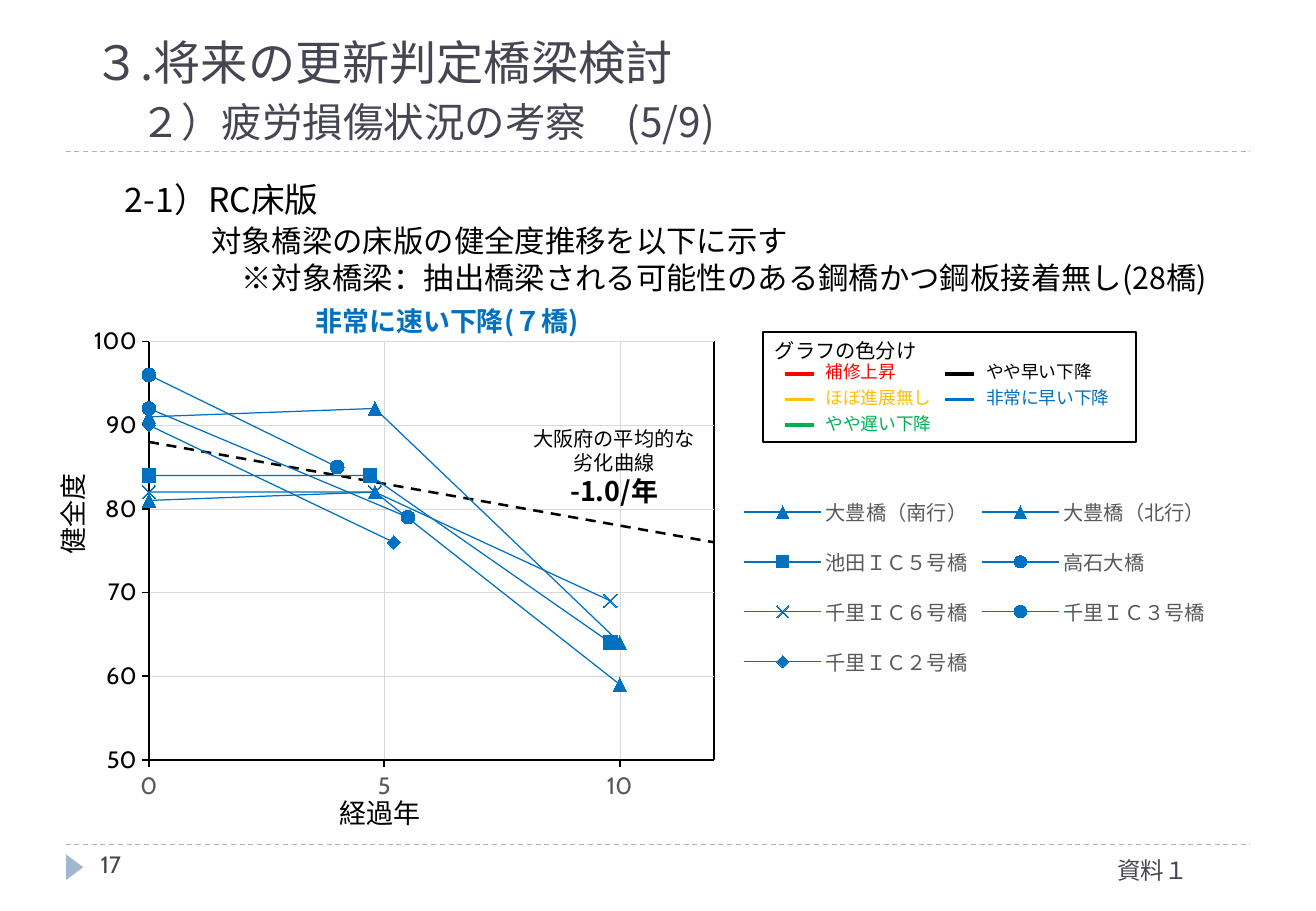
from lxml import etree
from pptx import Presentation
from pptx.chart.data import XyChartData
from pptx.dml.color import RGBColor
from pptx.enum.chart import XL_CHART_TYPE, XL_LEGEND_POSITION, XL_MARKER_STYLE, XL_TICK_MARK
from pptx.enum.dml import MSO_LINE
from pptx.enum.shapes import MSO_CONNECTOR, MSO_SHAPE
from pptx.enum.text import MSO_ANCHOR, MSO_AUTO_SIZE, PP_ALIGN
from pptx.oxml import parse_xml
from pptx.oxml.ns import nsdecls, qn
from pptx.util import Pt

LEFT, CENTER, RIGHT = PP_ALIGN.LEFT, PP_ALIGN.CENTER, PP_ALIGN.RIGHT
TRIANGLE, SQUARE = XL_MARKER_STYLE.TRIANGLE, XL_MARKER_STYLE.SQUARE
CIRCLE, CROSS = XL_MARKER_STYLE.CIRCLE, XL_MARKER_STYLE.X
DIAMOND, NO_MARKER = XL_MARKER_STYLE.DIAMOND, XL_MARKER_STYLE.NONE
DASH = MSO_LINE.DASH
JAPANESE, LATIN = "Noto Sans CJK JP", "Cabin"
COLORS = {
    "black": "000000", "white": "FFFFFF", "title": "464653", "rule": "9FB8CD",
    "blue": "0070C0", "red": "FF0000", "amber": "FFC000", "green": "00B050",
    "grid": "D9D9D9", "label": "595959",
}
BRIDGES = [
    ("大豊橋（南行）", TRIANGLE, [(0, 81), (4.8, 82), (10, 59)]),
    ("大豊橋（北行）", TRIANGLE, [(0, 91), (4.8, 92), (10, 64)]),
    ("池田ＩＣ５号橋", SQUARE, [(0, 84), (4.7, 84), (9.8, 64)]),
    ("高石大橋", CIRCLE, [(0, 96), (4, 85)]),
    ("千里ＩＣ６号橋", CROSS, [(0, 82), (4.8, 82), (9.8, 69)]),
    ("千里ＩＣ３号橋", CIRCLE, [(0, 92), (5.5, 79)]),
    ("千里ＩＣ２号橋", DIAMOND, [(0, 90), (5.2, 76)]),
]
AVERAGE = ("Series 8", NO_MARKER, [(0, 88), (20, 68)])
COLOR_KEY = [
    (0, 0, "補修上昇", "red"), (0, 1, "ほぼ進展無し", "amber"), (0, 2, "やや遅い下降", "green"),
    (1, 0, "やや早い下降", "black"), (1, 1, "非常に早い下降", "blue"),
]


def rgb(name):
    """Return the named colour."""
    return RGBColor.from_string(COLORS[name])


def style_font(font, size, color, name=LATIN, bold=False):
    """Set size, colour, family and weight of a font."""
    font.size = Pt(size)
    font.bold = bold
    font.color.rgb = rgb(color)
    font.name = name


def style_line(line, color, width, dash=None):
    """Set colour, width and dash of a line."""
    line.color.rgb = rgb(color)
    line.width = Pt(width)
    if dash:
        line.dash_style = dash


def style_paragraph(paragraph, size, color, name=JAPANESE, bold=False, align=LEFT):
    """Format a whole paragraph, East Asian letters included."""
    paragraph.alignment = align
    style_font(paragraph.font, size, color, name, bold)
    for properties in paragraph._p.iter(qn("a:defRPr")):
        etree.SubElement(properties, qn("a:ea"), typeface=JAPANESE)


def add_text(shapes, box, lines, size, color="black", name=JAPANESE, bold=False, align=LEFT):
    """Add a wrapping text box with one paragraph per line."""
    shape = shapes.add_textbox(*map(Pt, box))
    frame = shape.text_frame
    frame.word_wrap = True
    for index, line in enumerate(lines):
        paragraph = frame.add_paragraph() if index else frame.paragraphs[0]
        paragraph.text = line
        style_paragraph(paragraph, size, color, name, bold, align)
    return shape


def add_shape(shapes, kind, box, fill):
    """Add a flat preset shape without an outline."""
    shape = shapes.add_shape(kind, *map(Pt, box))
    shape.shadow.inherit = False
    shape.fill.solid()
    shape.fill.fore_color.rgb = rgb(fill)
    shape.line.fill.background()
    return shape


def add_rule(shapes, left, right, y, color, width, dash=None):
    """Add a horizontal line."""
    line = shapes.add_connector(MSO_CONNECTOR.STRAIGHT, Pt(left), Pt(y), Pt(right), Pt(y))
    style_line(line.line, color, width, dash)
    etree.SubElement(line._element.spPr, qn("a:effectLst"))


def add_title(slide):
    """Fill and place the two-line title."""
    title = slide.shapes.title
    title.left, title.top, title.width, title.height = Pt(48.2), Pt(18.7), Pt(686), Pt(72)
    frame = title.text_frame
    frame.auto_size = MSO_AUTO_SIZE.NONE
    frame.vertical_anchor = MSO_ANCHOR.BOTTOM
    paragraph = frame.paragraphs[0]
    style_paragraph(paragraph, 28, "title")
    heading = paragraph.add_run()
    heading.text = "３.将来の更新判定橋梁検討"
    heading.font.size = Pt(28)
    paragraph.add_line_break()
    for text, size in (("\u3000", 28), ("２）疲労損傷状況の考察　(5/9)", 24)):
        run = paragraph.add_run()
        run.text = text
        run.font.size = Pt(size)


def manual_layout(x, y, width, height, inner=False):
    """Build a chart layout element from fractions of the chart."""
    target = '<c:layoutTarget val="inner"/>' if inner else ""
    return parse_xml(
        f'<c:layout {nsdecls("c")}><c:manualLayout>{target}'
        '<c:xMode val="edge"/><c:yMode val="edge"/>'
        f'<c:x val="{x}"/><c:y val="{y}"/><c:w val="{width}"/><c:h val="{height}"/>'
        "</c:manualLayout></c:layout>")


def style_axis(axis, low, high, step, color):
    """Set scale, grid and labels of an axis."""
    axis.minimum_scale, axis.maximum_scale, axis.major_unit = low, high, step
    axis.has_major_gridlines = True
    style_line(axis.major_gridlines.format.line, "grid", 0.25)
    style_line(axis.format.line, "black", 1)
    axis.major_tick_mark = XL_TICK_MARK.OUTSIDE
    axis.minor_tick_mark = XL_TICK_MARK.NONE
    axis.tick_labels.number_format = "General"
    axis.tick_labels.number_format_is_linked = False
    style_font(axis.tick_labels.font, 14, color)


def style_series(series, marker, color, width, dash=None):
    """Set line and marker of a series."""
    series.smooth = False
    style_line(series.format.line, color, width, dash)
    series.marker.style = marker
    if marker != NO_MARKER:
        series.marker.size = 8
        series.marker.format.fill.solid()
        series.marker.format.fill.fore_color.rgb = rgb(color)
        style_line(series.marker.format.line, color, 0.75)


def add_legend(chart):
    """Add the bridge legend without the average curve."""
    chart.has_legend = True
    legend = chart.legend
    legend.position = XL_LEGEND_POSITION.BOTTOM
    legend.include_in_layout = False
    style_font(legend.font, 12, "label")
    element = legend._element
    for layout in element.findall(qn("c:layout")):
        element.remove(layout)
    entry = parse_xml(f'<c:legendEntry {nsdecls("c")}><c:idx val="{len(BRIDGES)}"/>'
                      '<c:delete val="1"/></c:legendEntry>')
    element.insert(1, entry)
    element.insert(2, manual_layout(0.57, 0.3, 0.42, 0.43))


def add_soundness_chart(slide):
    """Add the scatter chart of soundness over years."""
    data = XyChartData()
    for name, _, points in BRIDGES + [AVERAGE]:
        series = data.add_series(name)
        for x, y in points:
            series.add_data_point(x, y)
    box = map(Pt, (53.3, 192.2, 672.5, 302.4))
    chart = slide.shapes.add_chart(XL_CHART_TYPE.XY_SCATTER_LINES, *box, data).chart
    chart.has_title = False
    style_font(chart.font, 10, "black")
    plot = chart.plots[0]
    plot.vary_by_categories = False
    *bridges, average = plot.series
    for series, (_, marker, _) in zip(bridges, BRIDGES):
        style_series(series, marker, "blue", 0.75)
    style_series(average, NO_MARKER, "black", 1.5, DASH)
    style_axis(chart.category_axis, 0, 12, 5, "label")
    style_axis(chart.value_axis, 50, 100, 10, "black")
    area = chart._chartSpace.chart.plotArea
    for layout in area.findall(qn("c:layout")):
        area.remove(layout)
    area.insert(0, manual_layout(0.052, 0.034, 0.498, 0.82, inner=True))
    area.append(parse_xml(
        f'<c:spPr {nsdecls("c", "a")}><a:noFill/><a:ln w="9525"><a:solidFill>'
        f'<a:srgbClr val="{COLORS["black"]}"/></a:solidFill></a:ln></c:spPr>'))
    add_legend(chart)


def add_color_key(slide):
    """Add the framed key of line colours."""
    shapes = slide.shapes.add_group_shape().shapes
    frame = add_shape(shapes, MSO_SHAPE.RECTANGLE, (452.2, 196.6, 221, 65.5), "white")
    style_line(frame.line, "black", 1)
    add_text(shapes, (452.2, 197.3, 108, 21.6), ["グラフの色分け"], 12)
    for column, row, label, color in COLOR_KEY:
        left, y = 465.1 + 95 * column, 221.6 + 15.2 * row
        add_rule(shapes, left, left + 17.3, y, color, 2.25)
        add_text(shapes, (left + 17.3, y - 11, 96, 20.9), [label], 10.5, color)


def main():
    """Build and save the slide."""
    presentation = Presentation()
    presentation.slide_width, presentation.slide_height = Pt(780), Pt(540)
    slide = presentation.slides.add_slide(presentation.slide_layouts[5])
    shapes = slide.shapes
    for y in (90, 500.4):
        add_rule(shapes, 38.9, 740.9, y, "rule", 0.75, DASH)
    add_shape(shapes, MSO_SHAPE.ISOSCELES_TRIANGLE, (36.7, 509, 15.1, 10.1), "rule").rotation = 90
    add_soundness_chart(slide)
    add_title(slide)
    add_text(shapes, (67, 102.2, 674.6, 31.7), ["2-1）RC床版"], 20)
    add_text(shapes, (118, 128.2, 661, 51), [
        "対象橋梁の床版の健全度推移を以下に示す",
        "　※対象橋梁：抽出橋梁される可能性のある鋼橋かつ鋼板接着無し(28橋)"], 18)
    add_text(shapes, (140.4, 177.1, 249, 26.6), ["非常に速い下降(７橋)"], 16, "blue", bold=True, align=CENTER)
    add_text(shapes, (-1.4, 291.6, 89.3, 26.6), ["健全度"], 16, align=CENTER).rotation = 270
    add_text(shapes, (100.8, 468.7, 249, 26.6), ["経過年"], 16, align=CENTER)
    add_color_key(slide)
    note = add_text(shapes, (305.3, 249.1, 117.4, 55.4), ["大阪府の平均的な劣化曲線", "-1.0/年"], 12, align=CENTER)
    rate = note.text_frame.paragraphs[1].font
    rate.size, rate.bold = Pt(16), True
    add_text(shapes, (52.6, 500.4, 169.2, 28.8), ["17"], 14, "title", LATIN)
    add_text(shapes, (435.6, 504, 275.8, 28.8), ["資料１"], 14, "title", LATIN, align=RIGHT)
    presentation.save("out.pptx")


if __name__ == "__main__":
    main()
